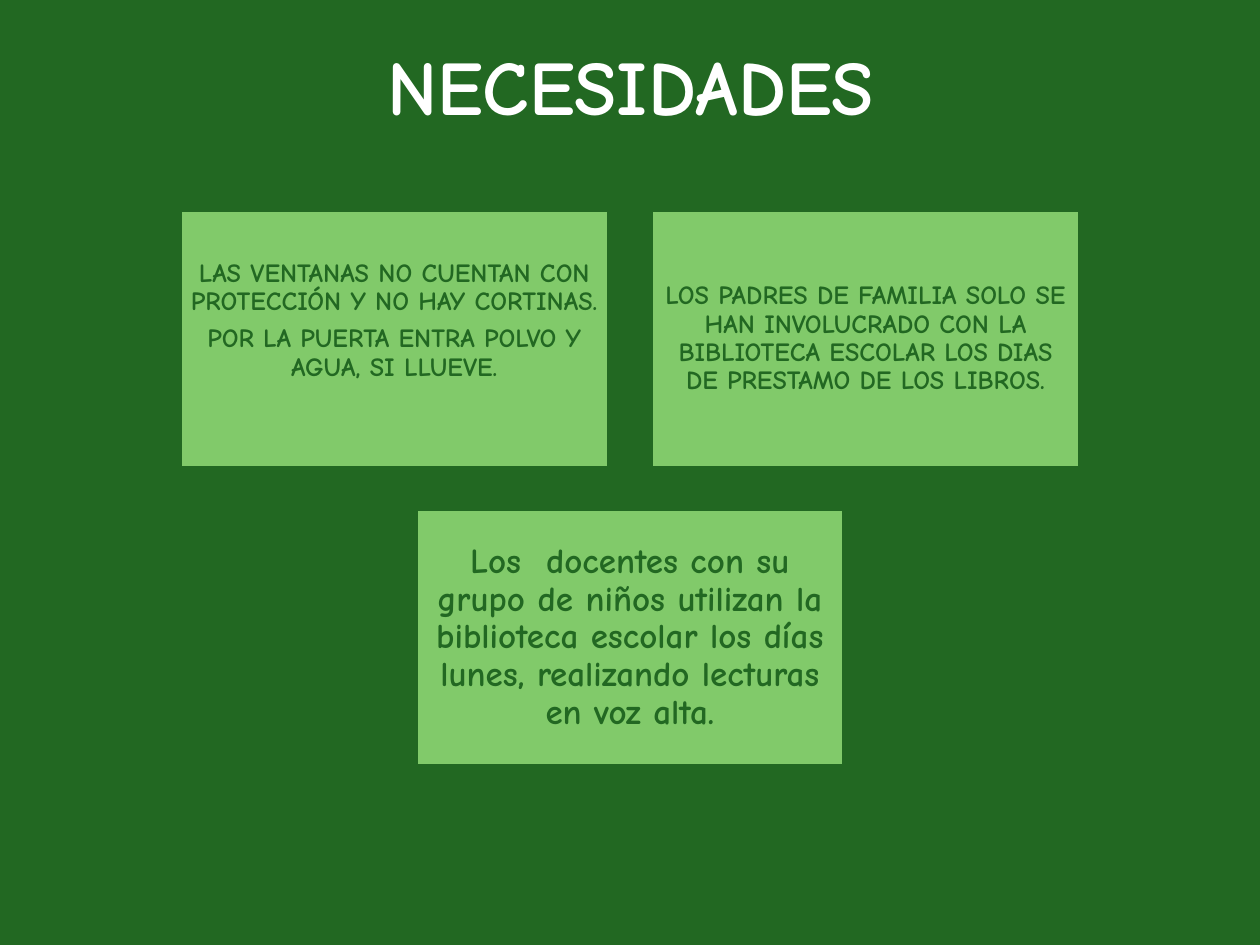
"""Build the slide NECESIDADES: cards in centred rows under a title."""
from pptx import Presentation
from pptx.dml.color import RGBColor as RGB
from pptx.enum.shapes import MSO_SHAPE as SHAPE
from pptx.enum.text import MSO_ANCHOR as ANCHOR, PP_ALIGN as ALIGN
from pptx.util import Inches, Pt

TITLE = "NECESIDADES"
ROWS = [
    [
        {"size": "small", "inset": 0.06, "lift": 0.29, "paragraphs": [
            "LAS VENTANAS NO CUENTAN CON PROTECCIÓN Y NO HAY CORTINAS.",
            "POR LA PUERTA ENTRA POLVO Y AGUA, SI LLUEVE."]},
        {"size": "small", "inset": 0.06, "lift": 0, "paragraphs": [
            "LOS PADRES DE FAMILIA SOLO SE HAN INVOLUCRADO CON LA "
            "BIBLIOTECA ESCOLAR LOS DIAS DE PRESTAMO DE LOS LIBROS."]},
    ],
    [
        {"size": "large", "inset": 0.08, "lift": 0, "paragraphs": [
            "Los  docentes con su grupo de niños utilizan la biblioteca "
            "escolar los días lunes, realizando lecturas en voz alta."]},
    ],
]

THEME = {
    "font": "Comic Neue",
    "dark": RGB.from_string("226822"),
    "card": RGB.from_string("81CA6A"),
    "white": RGB.from_string("FFFFFF"),
    "title": Pt(44), "large": Pt(20), "small": Pt(15),
}
SLIDE_W, SLIDE_H = 10, 7.5
CARD_W, CARD_H = 3.4, 2.04
GAP_X, GAP_Y, TOP = 0.34, 0.33, 1.67


def add_run(p, text, size, color):
    p.alignment = ALIGN.CENTER
    r = p.add_run()
    r.text = text
    r.font.name = THEME["font"]
    r.font.size = THEME[size]
    r.font.bold = True
    r.font.color.rgb = THEME[color]


def add_title(s):
    sp = s.shapes.title
    sp.left, sp.top = Inches(0.42), Inches(0.17)
    sp.width, sp.height = Inches(9.17), Inches(1)
    sp.text_frame.vertical_anchor = ANCHOR.MIDDLE
    add_run(sp.text_frame.paragraphs[0], TITLE, "title", "white")


def add_card(s, card, left, top):
    sp = s.shapes.add_shape(SHAPE.RECTANGLE, Inches(left), Inches(top),
                            Inches(CARD_W), Inches(CARD_H))
    sp.shadow.inherit = False
    sp.fill.solid()
    sp.fill.fore_color.rgb = THEME["card"]
    sp.line.color.rgb = THEME["dark"]
    sp.line.width = Pt(2)
    tf = sp.text_frame
    tf.word_wrap = True
    tf.vertical_anchor = ANCHOR.MIDDLE
    tf.margin_left = tf.margin_right = tf.margin_top = Inches(card["inset"])
    tf.margin_bottom = Inches(card["inset"] + card["lift"])
    for i, text in enumerate(card["paragraphs"]):
        p = tf.add_paragraph() if i else tf.paragraphs[0]
        p.line_spacing = 0.9
        p.space_after = Pt(5)
        add_run(p, text, card["size"], "dark")


def main():
    prs = Presentation()
    prs.slide_width, prs.slide_height = Inches(SLIDE_W), Inches(SLIDE_H)
    s = prs.slides.add_slide(prs.slide_layouts[5])
    s.background.fill.solid()
    s.background.fill.fore_color.rgb = THEME["dark"]
    add_title(s)
    for row, cards in enumerate(ROWS):
        row_w = len(cards) * (CARD_W + GAP_X) - GAP_X
        for col, card in enumerate(cards):
            left = (SLIDE_W - row_w) / 2 + col * (CARD_W + GAP_X)
            add_card(s, card, left, TOP + row * (CARD_H + GAP_Y))
    prs.save("out.pptx")


if __name__ == "__main__":
    main()
